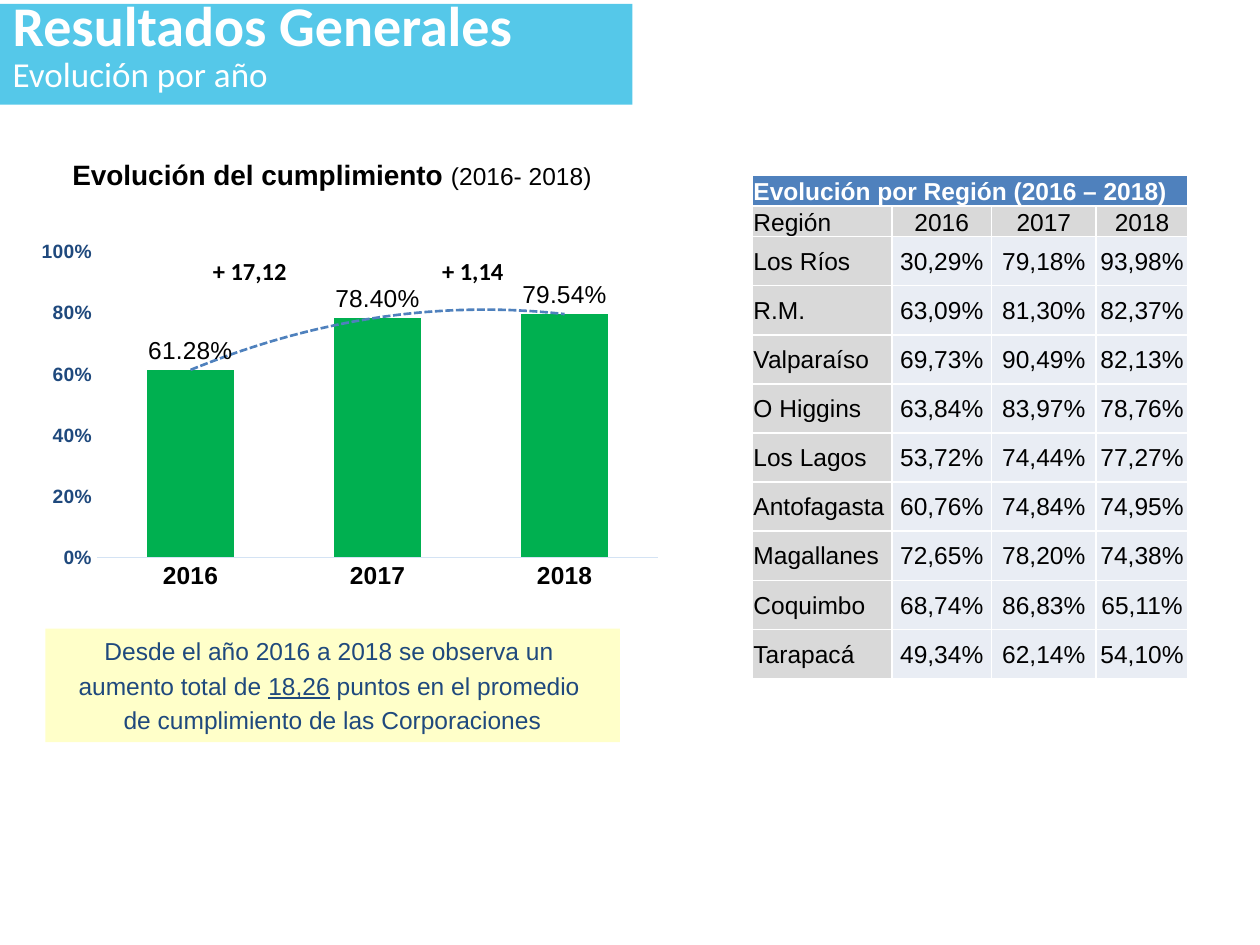
"""Build a slide with yearly compliance results: a column chart, a note and a regional table."""
from lxml import etree
from pptx import Presentation
from pptx.chart.data import CategoryChartData
from pptx.dml.color import RGBColor
from pptx.enum.chart import XL_CHART_TYPE, XL_LABEL_POSITION, XL_TICK_MARK
from pptx.enum.shapes import MSO_SHAPE
from pptx.enum.text import MSO_ANCHOR, MSO_AUTO_SIZE, PP_ALIGN
from pptx.oxml import parse_xml
from pptx.oxml.ns import nsdecls, qn
from pptx.util import Inches, Pt

LEFT, CENTER = PP_ALIGN.LEFT, PP_ALIGN.CENTER
MIDDLE, BOTTOM = MSO_ANCHOR.MIDDLE, MSO_ANCHOR.BOTTOM
NO_TICK = XL_TICK_MARK.NONE
COLUMNS = XL_CHART_TYPE.COLUMN_CLUSTERED
OUTSIDE_END = XL_LABEL_POSITION.OUTSIDE_END
NO_AUTOFIT = MSO_AUTO_SIZE.NONE
RECTANGLE = MSO_SHAPE.RECTANGLE

WHITE = RGBColor(0xFF, 0xFF, 0xFF)
BLACK = RGBColor(0, 0, 0)
SKY = RGBColor(0x55, 0xC8, 0xE9)
NAVY = RGBColor(0x1F, 0x49, 0x7D)
GREEN = RGBColor(0x00, 0xB0, 0x50)
BLUE = RGBColor(0x4F, 0x81, 0xBD)
PALE_BLUE = RGBColor(0xD4, 0xE3, 0xF4)
CREAM = RGBColor(0xFF, 0xFF, 0xC9)
GREY = RGBColor(0xD9, 0xD9, 0xD9)
LAVENDER = RGBColor(0xE9, 0xED, 0xF4)

YEARS = ["2016", "2017", "2018"]
REGIONS = [
    ["Los Ríos", "30,29%", "79,18%", "93,98%"],
    ["R.M.", "63,09%", "81,30%", "82,37%"],
    ["Valparaíso", "69,73%", "90,49%", "82,13%"],
    ["O Higgins", "63,84%", "83,97%", "78,76%"],
    ["Los Lagos", "53,72%", "74,44%", "77,27%"],
    ["Antofagasta", "60,76%", "74,84%", "74,95%"],
    ["Magallanes", "72,65%", "78,20%", "74,38%"],
    ["Coquimbo", "68,74%", "86,83%", "65,11%"],
    ["Tarapacá", "49,34%", "62,14%", "54,10%"],
]


def style(font, size, color, bold=False, name="Arial"):
    font.name, font.size, font.bold = name, Pt(size), bold
    font.color.rgb = color


def add_span(para, text, size, color, bold=False, name="Arial"):
    span = para.add_run()
    span.text = text
    style(span.font, size, color, bold, name)
    return span


deck = Presentation()
deck.slide_width, deck.slide_height = Inches(10), Inches(7.5)
page = deck.slides.add_slide(deck.slide_layouts[5])

title = page.shapes.title
title.left, title.top = Inches(0), Inches(0.03)
title.width, title.height = Inches(5.02), Inches(0.8)
title.fill.solid()
title.fill.fore_color.rgb = SKY
title.text_frame.text = "Resultados Generales\nEvolución por año"
title.text_frame.auto_size = NO_AUTOFIT
title.text_frame.vertical_anchor = MIDDLE
for para, size, spacing, bold in zip(title.text_frame.paragraphs, (32, 20), (25, 21), (True, False)):
    para.alignment = LEFT
    para.line_spacing = Pt(spacing)
    para.space_before = Pt(0)
    style(para.runs[0].font, size, WHITE, bold, "Calibri")

chart_data = CategoryChartData(number_format="0.00%")
chart_data.categories = YEARS
chart_data.add_series("Series 1", (0.6128, 0.784, 0.7954))
chart = page.shapes.add_chart(
    COLUMNS, Inches(0.22), Inches(1.76), Inches(5.24), Inches(3), chart_data
).chart
chart.has_legend = False
chart.has_title = False
style(chart.font, 10, BLACK, name="Calibri")

years_axis = chart.category_axis
years_axis.major_tick_mark = NO_TICK
years_axis.format.line.color.rgb = PALE_BLUE
years_axis.format.line.width = Pt(0.75)
style(years_axis.tick_labels.font, 14, BLACK, True)

percent_axis = chart.value_axis
percent_axis.minimum_scale, percent_axis.maximum_scale = 0, 1
percent_axis.major_unit = 0.2
percent_axis.has_major_gridlines = False
percent_axis.major_tick_mark = NO_TICK
percent_axis.format.line.fill.background()
percent_axis.tick_labels.number_format = "0%"
percent_axis.tick_labels.number_format_is_linked = False
style(percent_axis.tick_labels.font, 11, NAVY, True)

plot = chart.plots[0]
plot.vary_by_categories = False
plot.gap_width, plot.overlap = 115, -24
series = plot.series[0]
series.format.fill.solid()
series.format.fill.fore_color.rgb = GREEN
labels = series.data_labels
labels.show_value = True
labels.position = OUTSIDE_END
labels.number_format = "0.00%"
labels.number_format_is_linked = False
style(labels.font, 14, BLACK)

trendline = parse_xml(
    f'<c:trendline {nsdecls("c", "a")}><c:spPr><a:ln w="{Pt(1.5)}"><a:solidFill>'
    f'<a:srgbClr val="{BLUE}"/></a:solidFill><a:prstDash val="sysDash"/></a:ln></c:spPr>'
    '<c:trendlineType val="poly"/><c:order val="2"/>'
    '<c:dispRSqr val="0"/><c:dispEq val="0"/></c:trendline>'
)
series._element.find(qn("c:cat")).addprevious(trendline)

plot_area = chart._chartSpace.chart.plotArea
for old_layout in plot_area.findall(qn("c:layout")):
    plot_area.remove(old_layout)
layout = etree.Element(qn("c:layout"))
manual = etree.SubElement(layout, qn("c:manualLayout"))
for tag, value in (("layoutTarget", "inner"), ("xMode", "edge"), ("yMode", "edge"),
                   ("x", "0.105"), ("y", "0.079"), ("w", "0.85"), ("h", "0.809")):
    etree.SubElement(manual, qn(f"c:{tag}")).set("val", value)
plot_area.insert(0, layout)

for left, change in ((1.59, "+ 17,12"), (3.41, "+ 1,14")):
    box = page.shapes.add_textbox(Inches(left), Inches(1.98), Inches(0.98), Inches(0.34))
    box.text_frame.word_wrap = True
    add_span(box.text_frame.paragraphs[0], change, 14, BLACK, True, "Calibri")

heading = page.shapes.add_textbox(Inches(0.46), Inches(1.2), Inches(4.35), Inches(0.37))
heading.text_frame.word_wrap = True
para = heading.text_frame.paragraphs[0]
para.alignment = CENTER
add_span(para, "Evolución del cumplimiento ", 16, BLACK, True)
add_span(para, "(2016- 2018)", 14, BLACK)

note = page.shapes.add_shape(RECTANGLE, Inches(0.36), Inches(4.99), Inches(4.56), Inches(0.9))
note.shadow.inherit = False
note.fill.solid()
note.fill.fore_color.rgb = CREAM
note.line.fill.background()
note.text_frame.word_wrap = True
note.text_frame.vertical_anchor = MIDDLE
note_lines = [
    ["Desde el año 2016 a 2018 se observa un "],
    ["aumento total de ", "18,26", " puntos en el promedio "],
    ["de cumplimiento de las Corporaciones"],
]
for index, parts in enumerate(note_lines):
    para = note.text_frame.add_paragraph() if index else note.text_frame.paragraphs[0]
    para.alignment = CENTER
    para.space_before = Pt(3 if index else 0)
    properties = para._p.get_or_add_pPr()
    properties.set("marL", str(Inches(0.38)))
    properties.set("indent", str(Inches(-0.38)))
    for part in parts:
        add_span(para, part, 14, NAVY).font.underline = part == "18,26"

rows = [["Evolución por Región (2016 – 2018)", "", "", ""], ["Región", *YEARS], *REGIONS]
table = page.shapes.add_table(
    len(rows), 4, Inches(5.97), Inches(1.39), Inches(3.46), Inches(3.95)
).table
for column, width in zip(table.columns, (1.11, 0.79, 0.83, 0.73)):
    column.width = Inches(width)
for row_index, texts in enumerate(rows):
    table.rows[row_index].height = Inches(0.22 if row_index < 2 else 0.39)
    for column_index, text in enumerate(texts):
        cell = table.cell(row_index, column_index)
        cell.margin_left = cell.margin_right = cell.margin_top = Inches(0.01)
        cell.margin_bottom = 0
        cell.vertical_anchor = BOTTOM if row_index < 2 else MIDDLE
        for side in ("lnL", "lnR", "lnT", "lnB"):
            cell._tc.get_or_add_tcPr().append(parse_xml(
                f'<a:{side} {nsdecls("a")} w="{Pt(1)}"><a:solidFill>'
                f'<a:srgbClr val="{WHITE}"/></a:solidFill></a:{side}>'
            ))
        is_label = row_index == 1 or column_index == 0
        cell.fill.solid()
        cell.fill.fore_color.rgb = BLUE if row_index == 0 else GREY if is_label else LAVENDER
        para = cell.text_frame.paragraphs[0]
        para.alignment = CENTER if column_index else LEFT
        style(para.font, 14, BLACK)
        if text:
            add_span(para, text, 14, BLACK if row_index else WHITE, row_index == 0)
table.cell(0, 0).merge(table.cell(0, 3))

deck.save("out.pptx")
